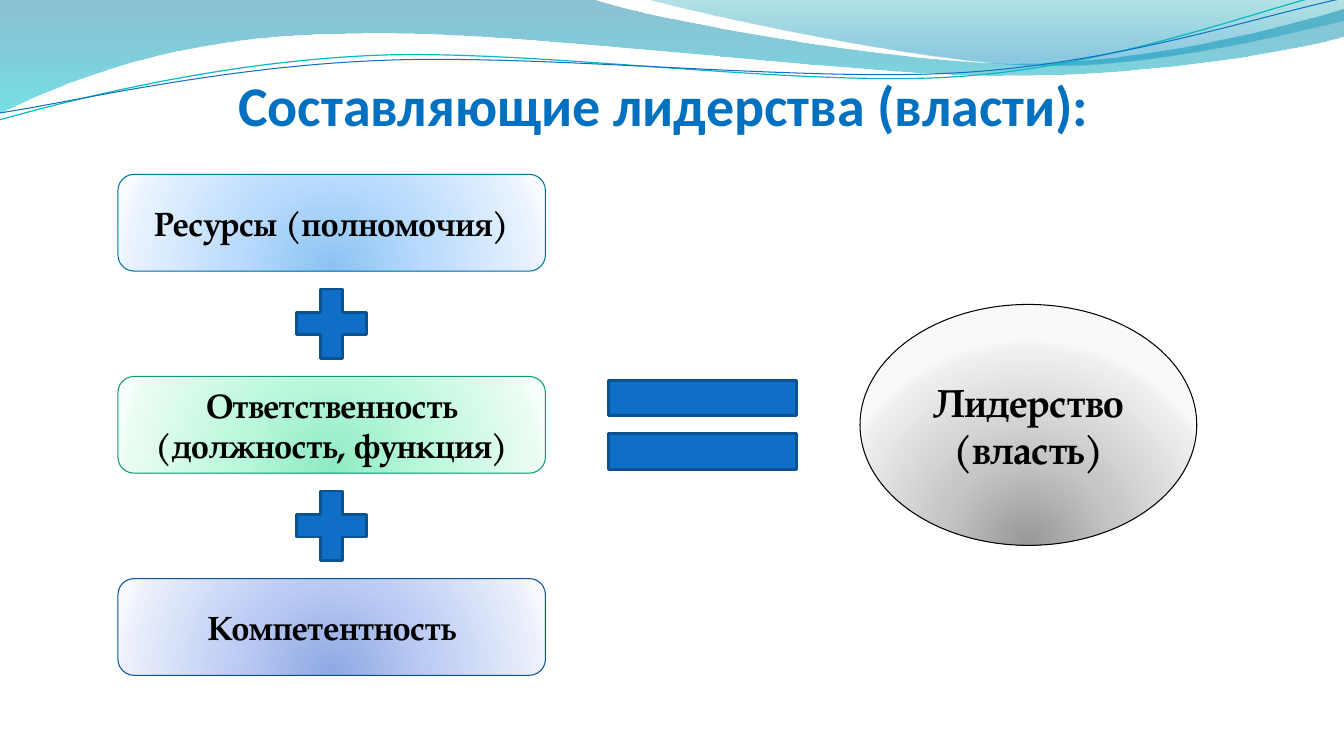
from lxml.etree import SubElement
from pptx import Presentation
from pptx.dml.color import RGBColor
from pptx.enum.shapes import MSO_SHAPE
from pptx.enum.text import MSO_ANCHOR, MSO_AUTO_SIZE, PP_ALIGN
from pptx.oxml.ns import qn
from pptx.util import Pt

PX = 9144
BODY_FONT = "TeX Gyre Pagella"
ACCENT = "0F6FC6"
ACCENT_DARK = "0B5292"

WAVES = [
    ((0, -1), [
        [(587, -1)],
        [(634, 17), (885, 63), (1011, 63)],
        [(1138, 63), (1278, 26), (1333, 9)],
        [(1335, 36)],
        [(1311, 44), (1160, 76), (994, 75)],
        [(829, 75), (509, 28), (343, 34)],
        [(172, 35), (61, 83), (-1, 113)],
    ], [(0, "0074A1", 45), (100, "00C6CF", 55)]),
    ((639, -1), [
        [(679, 11), (909, 62), (1025, 65)],
        [(1141, 69), (1282, 32), (1333, 21)],
        [(1333, 0)],
    ], [(0, "00A1A9", 30), (80, "008BBF", 45)]),
]
STRANDS = [
    ((-1, 119), [
        [(64, 101), (211, 62), (369, 55)],
        [(527, 48), (790, 87), (950, 76)],
        [(1110, 65), (1252, 8), (1331, -10)],
    ], "0AB8BF", 0.85),
    ((0, 112), [
        [(63, 103), (218, 66), (378, 60)],
        [(537, 53), (796, 82), (955, 72)],
        [(1115, 62), (1255, 14), (1334, -2)],
    ], ACCENT, 0.75),
]
COMPONENTS = [
    ("Ресурсы (полномочия)", ["8BC2F1", "B9DBFD", "EAF3FE", "F8FBFF"], "0074A1"),
    ("Ответственность (должность, функция)",
     ["8DEAC2", "BAF8DB", "EAFCF3", "F7FFFB"], "0A9B74"),
    ("Компетентность", ["8DA8E3", "BBCBF3", "EAEFFB", "F7F9FF"], "095295"),
]
RESULT_COLORS = ["979797", "C6C6C6", "EEEEEE", "F9F9F9"]
GLOW_POSITIONS = [0, 43, 93, 100]


def color(value):
    return RGBColor.from_string(value)


def set_all(target, formats):
    for name, value in formats.items():
        setattr(target, name, value)


def set_line(shape, value, width):
    shape.line.color.rgb = color(value)
    shape.line.width = Pt(width)


def set_gradient(shape, stops, radial):
    shape.fill.background()
    properties = shape._element.spPr
    empty_fill = properties.find(qn("a:noFill"))
    gradient = SubElement(properties, qn("a:gradFill"), rotWithShape="1")
    properties.replace(empty_fill, gradient)
    stop_list = SubElement(gradient, qn("a:gsLst"))
    for position, value, opacity in stops:
        stop = SubElement(stop_list, qn("a:gs"), pos=str(position * 1000))
        stop_color = SubElement(stop, qn("a:srgbClr"), val=value)
        if opacity < 100:
            SubElement(stop_color, qn("a:alpha"), val=str(opacity * 1000))
    if radial:
        center = SubElement(gradient, qn("a:path"), path="circle")
        SubElement(center, qn("a:fillToRect"), l="50000", t="130000",
                   r="50000", b="-30000")
    else:
        SubElement(gradient, qn("a:lin"), ang="5400000", scaled="1")


def write_text(shape, text, font_name, size, value, anchor):
    frame = shape.text_frame
    frame.text = text
    set_all(frame, {"word_wrap": True, "auto_size": MSO_AUTO_SIZE.NONE,
                    "vertical_anchor": anchor})
    paragraph = frame.paragraphs[0]
    paragraph.alignment = PP_ALIGN.CENTER
    font = paragraph.runs[0].font
    set_all(font, {"name": font_name, "size": Pt(size), "bold": True})
    font.color.rgb = color(value)


def bend(shape, segments):
    outline = next(shape._element.iter(qn("a:path")))
    steps = iter(outline.findall(qn("a:lnTo")))
    for segment in segments:
        sides = [next(steps) for point in segment]
        if len(sides) == 3:
            curve = SubElement(outline, qn("a:cubicBezTo"))
            sides[0].addprevious(curve)
            for side in sides:
                curve.append(side[0])
                outline.remove(side)


def add_outline(slide, start, segments, close):
    points = [(x * PX, y * PX) for segment in segments for x, y in segment]
    builder = slide.shapes.build_freeform(start[0] * PX, start[1] * PX)
    builder.add_line_segments(points, close=close)
    shape = builder.convert_to_shape()
    shape.shadow.inherit = False
    bend(shape, segments)
    return shape


def add_waves(slide):
    for start, segments, stops in WAVES:
        wave = add_outline(slide, start, segments, True)
        set_gradient(wave, stops, False)
        wave.line.fill.background()
    for start, segments, value, width in STRANDS:
        strand = add_outline(slide, start, segments, False)
        strand.fill.background()
        set_line(strand, value, width)


def add_title(slide, left, top, width, height):
    title = slide.shapes.title
    set_all(title, {"left": left * PX, "top": top * PX,
                    "width": width * PX, "height": height * PX})
    set_all(title.text_frame, {"margin_left": 0, "margin_right": 0,
                               "margin_top": 5 * PX, "margin_bottom": 0})
    write_text(title, "Составляющие лидерства (власти):", "Calibri", 40,
               "0070C0", MSO_ANCHOR.BOTTOM)
    title._element.getparent().append(title._element)


def add_preset(slide, kind, left, top, width, height):
    box = [round(length * PX) for length in (left, top, width, height)]
    shape = slide.shapes.add_shape(kind, *box)
    shape.shadow.inherit = False
    return shape


def add_glowing(slide, kind, box, text, size, colors, line):
    shape = add_preset(slide, kind, *box)
    set_gradient(shape, [(position, value, 100) for position, value
                         in zip(GLOW_POSITIONS, colors)], True)
    set_line(shape, line, 0.75)
    write_text(shape, text, BODY_FONT, size, "000000", MSO_ANCHOR.MIDDLE)


def add_sign(slide, kind, *box):
    sign = add_preset(slide, kind, *box)
    sign.fill.solid()
    sign.fill.fore_color.rgb = color(ACCENT)
    set_line(sign, ACCENT_DARK, 2)


def add_components(slide, left, top, width, height):
    box_height, plus_width, plus_height = 96, 95, 94
    pitch = (height - box_height) / (len(COMPONENTS) - 1)
    for index, (text, colors, line) in enumerate(COMPONENTS):
        box_top = top + index * pitch
        add_glowing(slide, MSO_SHAPE.ROUNDED_RECTANGLE,
                    (left, box_top, width, box_height), text, 24, colors, line)
        if index:
            gap_middle = box_top - (pitch - box_height) / 2
            add_sign(slide, MSO_SHAPE.MATH_PLUS, left + (width - plus_width) / 2,
                     gap_middle - plus_height / 2, plus_width, plus_height)


def add_result(slide, left, top, width, height):
    equal_width, equal_height, oval_width = 254, 150, 334
    add_sign(slide, MSO_SHAPE.MATH_EQUAL, left, top + (height - equal_height) / 2,
             equal_width, equal_height)
    add_glowing(slide, MSO_SHAPE.OVAL,
                (left + width - oval_width, top, oval_width, height),
                "Лидерство (власть)", 28, RESULT_COLORS, "000000")


def main():
    presentation = Presentation()
    set_all(presentation, {"slide_width": 1333 * PX, "slide_height": 750 * PX})
    slide = presentation.slides.add_slide(presentation.slide_layouts[5])
    add_waves(slide)
    add_title(slide, 58, 69, 1200, 68)
    add_components(slide, 117, 173, 424, 497)
    add_result(slide, 570, 302, 617, 239)
    presentation.save("out.pptx")


if __name__ == "__main__":
    main()
